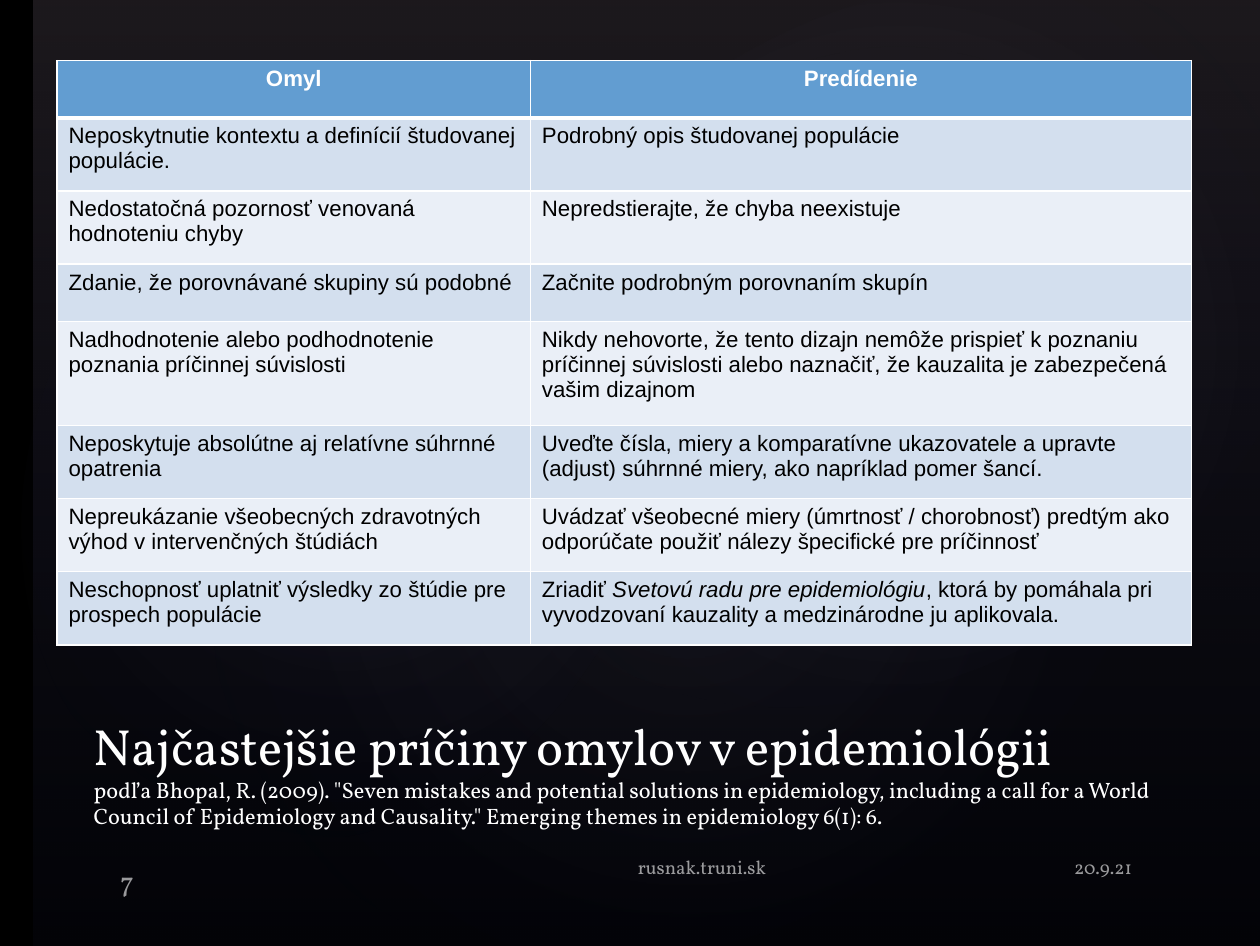
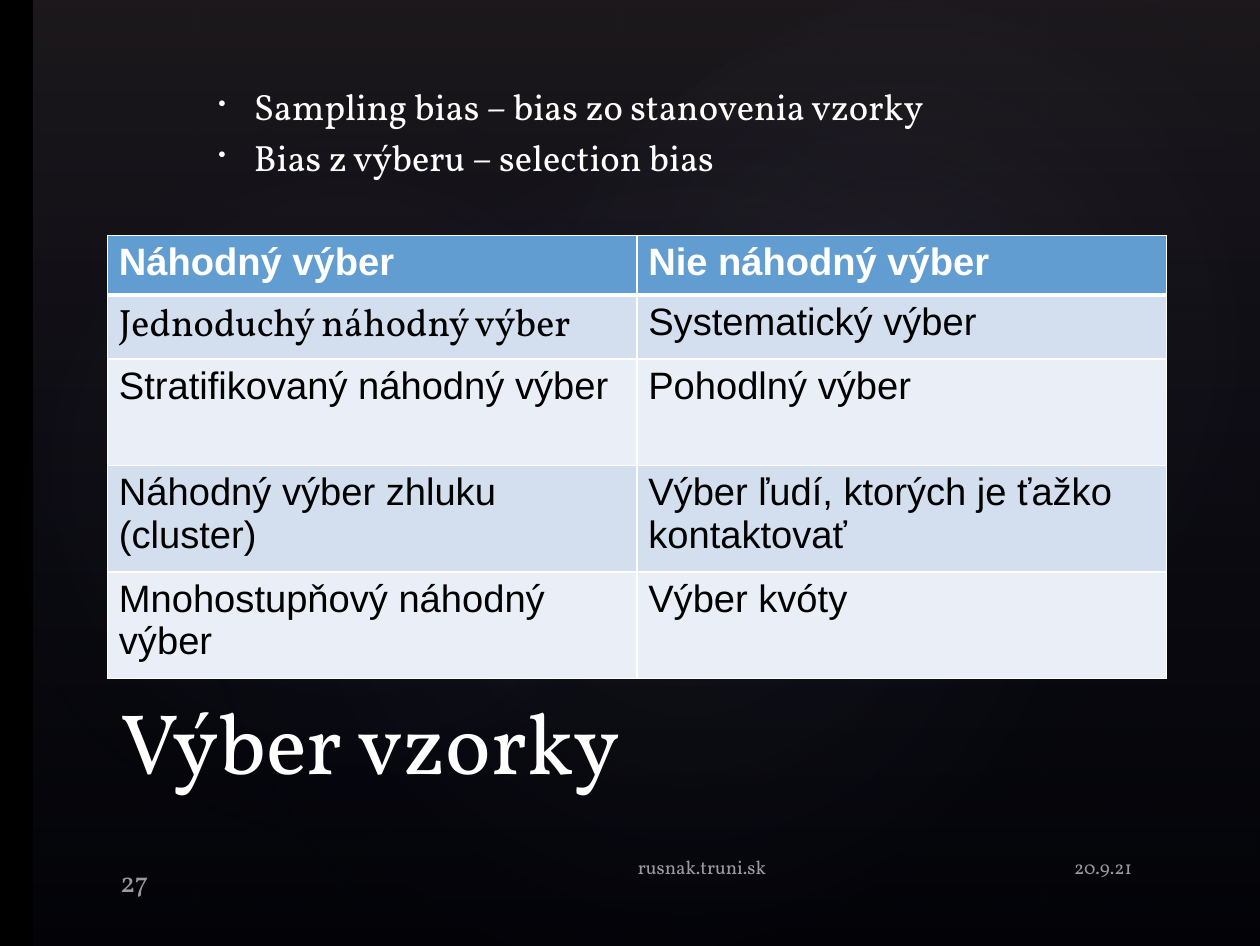
from lxml.etree import SubElement
from pptx import Presentation
from pptx.dml.color import RGBColor
from pptx.enum.shapes import MSO_SHAPE as Shape
from pptx.enum.text import MSO_ANCHOR as Anchor, PP_ALIGN as Align
from pptx.oxml import parse_xml
from pptx.oxml.ns import nsdecls, qn
from pptx.util import Inches, Pt

WIDTH, HEIGHT = 11.02, 8.27
SERIF, SANS = "Vollkorn", "Arial"
WHITE, BLACK = "FFFFFF", "000000"
HEADER_FILL, BAND_FILLS = "629DD1", ("D3DFEE", "EAEFF7")
NIGHT, MAUVE, PEARL = "242852", "504652", "C4BCC6"
LINEAR = '<a:lin ang="5400000" scaled="0"/>'
RADIAL = ('<a:path path="circle">'
          '<a:fillToRect l="50000" t="50000" r="50000" b="50000"/></a:path>')
GLOWS = (
    ((1.65, 1.25, 8.73, 6.88), 328.7, 7),
    ((-0.33, 1.41, 6.68, 5.4), 294.3, 8),
    ((3.95, 0.14, 7.81, 5.73), 328.7, 8),
)
FOOTER = (5.47, 7.42, 1.37, 0.44)
DATE = (9.12, 7.42, 0.89, 0.44)
NUMBER = (0.94, 7.48, 0.9, 0.38)

MISTAKES = (
    ("Omyl", "Predídenie"),
    ("Neposkytnutie kontextu a definícií študovanej populácie.",
     "Podrobný opis študovanej populácie"),
    ("Nedostatočná pozornosť venovaná hodnoteniu chyby",
     "Nepredstierajte, že chyba neexistuje"),
    ("Zdanie, že porovnávané skupiny sú podobné",
     "Začnite podrobným porovnaním skupín"),
    ("Nadhodnotenie alebo podhodnotenie poznania príčinnej súvislosti",
     "Nikdy nehovorte, že tento dizajn nemôže prispieť k poznaniu príčinnej "
     "súvislosti alebo naznačiť, že kauzalita je zabezpečená vašim dizajnom"),
    ("Neposkytuje absolútne aj relatívne súhrnné opatrenia",
     "Uveďte čísla, miery a komparatívne ukazovatele a upravte (adjust) "
     "súhrnné miery, ako napríklad pomer šancí."),
    ("Nepreukázanie všeobecných zdravotných výhod v intervenčných štúdiách",
     "Uvádzať všeobecné miery (úmrtnosť / chorobnosť) predtým ako "
     "odporúčate použiť nálezy špecifické pre príčinnosť"),
    ("Neschopnosť uplatniť výsledky zo štúdie pre prospech populácie",
     ("Zriadiť ", "Svetovú radu pre epidemiológiu",
      ", ktorá by pomáhala pri vyvodzovaní kauzality a medzinárodne ju "
      "aplikovala.")),
)
SAMPLING = (
    ("Náhodný výber", "Nie náhodný výber"),
    ("Jednoduchý náhodný výber", "Systematický výber"),
    ("Stratifikovaný náhodný výber", "Pohodlný výber"),
    ("Náhodný výber zhluku (cluster)",
     "Výber ľudí, ktorých je ťažko kontaktovať"),
    ("Mnohostupňový náhodný výber", "Výber kvóty"),
)
CITATION = ('podľa Bhopal, R. (2009). "Seven mistakes and potential solutions in '
            'epidemiology, including a call for a World Council of Epidemiology '
            'and Causality." Emerging themes in epidemiology 6(1): 6.')


def rgb(value):
    """Turn a hex string into a colour."""
    return RGBColor.from_string(value)


def inches(box):
    """Turn a box of numbers into lengths."""
    return [Inches(length) for length in box]


def write(paragraph, text, size, font=SERIF, color=WHITE, bold=False,
          italic=False, alpha=None):
    """Add a formatted run to a paragraph."""
    run = paragraph.add_run()
    run.text = text
    run.font.size, run.font.name = Pt(size), font
    run.font.bold, run.font.italic = bold, italic
    run.font.color.rgb = rgb(color)
    if alpha is not None:
        color_element = run.font.fill._xPr.find(qn("a:solidFill"))[0]
        SubElement(color_element, qn("a:alpha"), val=str(alpha * 1000))


def add_text_frame(slide, box, anchor=Anchor.TOP, bottom=0.06):
    """Add a wrapping text box and return its frame."""
    frame = slide.shapes.add_textbox(*inches(box)).text_frame
    frame.word_wrap = True
    frame.vertical_anchor = anchor
    frame.margin_left = frame.margin_right = Inches(0.11)
    frame.margin_top, frame.margin_bottom = Inches(0.06), Inches(bottom)
    return frame


def add_gradient_shape(slide, kind, box, stops, direction, rotation=0):
    """Add an unlined shape with a translucent gradient."""
    shape = slide.shapes.add_shape(kind, *inches(box))
    shape.shadow.inherit = False
    shape.line.fill.background()
    shape.rotation = rotation
    stops_xml = "".join(
        f'<a:gs pos="{position * 1000}"><a:srgbClr val="{color}">'
        f'<a:alpha val="{alpha * 1000}"/></a:srgbClr></a:gs>'
        for position, color, alpha in stops)
    gradient = parse_xml(f'<a:gradFill {nsdecls("a")} rotWithShape="1">'
                         f'<a:gsLst>{stops_xml}</a:gsLst>{direction}</a:gradFill>')
    shape._element.spPr.find(qn("a:prstGeom")).addnext(gradient)


def add_backdrop(slide):
    """Add the dark sheet and its soft glows."""
    add_gradient_shape(slide, Shape.RECTANGLE, (0.29, 0, WIDTH - 0.29, HEIGHT),
                       ((0, MAUVE, 36), (100, NIGHT, 10)), LINEAR)
    for box, rotation, alpha in GLOWS:
        add_gradient_shape(slide, Shape.OVAL, box,
                           ((0, PEARL, alpha), (58, NIGHT, 0)), RADIAL, rotation)


def add_footer(slide, number):
    """Add the date, the slide number and the site address."""
    date = add_text_frame(slide, DATE).paragraphs[0]
    date.alignment = Align.RIGHT
    write(date, "20.9.21", 12, alpha=60)
    page = add_text_frame(slide, NUMBER, Anchor.BOTTOM, bottom=0.01)
    write(page.paragraphs[0], str(number), 18, alpha=60)
    write(add_text_frame(slide, FOOTER).paragraphs[0], "rusnak.truni.sk", 12, alpha=60)


def add_title(slide, box, text, size, citation=None):
    """Add the title, with a smaller citation below it if given."""
    paragraph = add_text_frame(slide, box, Anchor.BOTTOM).paragraphs[0]
    write(paragraph, text, size)
    if citation:
        paragraph.add_line_break()
        write(paragraph, citation, 14)


def add_bullets(slide, box, items, size):
    """Add a bulleted list."""
    frame = add_text_frame(slide, box, Anchor.MIDDLE)
    for index, item in enumerate(items):
        paragraph = frame.add_paragraph() if index else frame.paragraphs[0]
        paragraph.space_before = Pt(size * 0.2)
        properties = paragraph._p.get_or_add_pPr()
        properties.set("marL", str(Inches(0.33)))
        properties.set("indent", str(Inches(-0.31)))
        SubElement(properties, qn("a:buSzPct"), val="60000")
        SubElement(properties, qn("a:buChar"), char="•")
        write(paragraph, item, size)


def format_cell(cell, fill, bottom_width):
    """Set white borders and a plain fill."""
    properties = cell._tc.get_or_add_tcPr()
    for side, width in (("L", 1), ("R", 1), ("T", 1), ("B", bottom_width)):
        line = SubElement(properties, qn(f"a:ln{side}"), w=str(Pt(width)))
        SubElement(SubElement(line, qn("a:solidFill")), qn("a:srgbClr"), val=WHITE)
    cell.fill.solid()
    cell.fill.fore_color.rgb = rgb(fill)


def add_banded_table(slide, position, rows, widths, heights, size,
                     header_align=Align.LEFT, serif_cells=()):
    """Add a table with a blue header; odd parts of a split cell are italic."""
    box = (*position, sum(widths), sum(heights))
    table = slide.shapes.add_table(len(rows), len(widths), *inches(box)).table
    for column, width in zip(table.columns, widths):
        column.width = Inches(width)
    for row_index, (values, height) in enumerate(zip(rows, heights)):
        header = row_index == 0
        table.rows[row_index].height = Inches(height)
        fill = HEADER_FILL if header else BAND_FILLS[(row_index - 1) % 2]
        for column_index, value in enumerate(values):
            cell = table.cell(row_index, column_index)
            format_cell(cell, fill, 3 if header else 1)
            paragraph = cell.text_frame.paragraphs[0]
            paragraph.alignment = header_align if header else Align.LEFT
            font = SERIF if (row_index, column_index) in serif_cells else SANS
            parts = (value,) if isinstance(value, str) else value
            for part_index, part in enumerate(parts):
                write(paragraph, part, size, font, WHITE if header else BLACK,
                      bold=header, italic=part_index % 2 == 1)


def add_slide(presentation, number):
    """Add a slide with the shared backdrop and footer."""
    slide = presentation.slides.add_slide(presentation.slide_layouts[6])
    add_backdrop(slide)
    add_footer(slide, number)
    return slide


def add_mistakes_slide(presentation):
    """Build the slide on common mistakes in epidemiology."""
    slide = add_slide(presentation, 7)
    add_title(slide, (0.71, 6.21, 9.52, 1.1),
              "Najčastejšie príčiny omylov v epidemiológii", 32, CITATION)
    add_banded_table(slide, (0.5, 0.53), MISTAKES, (4.14, 5.78),
                     (0.5, 0.64, 0.64, 0.5, 0.91, 0.64, 0.64, 0.64), 14,
                     header_align=Align.CENTER)


def add_sampling_slide(presentation):
    """Build the slide on sample selection."""
    slide = add_slide(presentation, 27)
    add_bullets(slide, (1.78, 0.33, 7.35, 1.64),
                ("Sampling bias – bias zo stanovenia vzorky",
                 "Bias z výberu – selection bias"), 23)
    add_title(slide, (0.94, 5.88, 9.09, 1.1), "Výber vzorky", 54)
    add_banded_table(slide, (0.94, 2.06), SAMPLING, (4.63, 4.63),
                     (0.52, 0.56, 0.93, 0.93, 0.93), 24, serif_cells={(1, 0)})


def main():
    """Build and save the presentation."""
    presentation = Presentation()
    presentation.slide_width = Inches(WIDTH)
    presentation.slide_height = Inches(HEIGHT)
    background = presentation.slide_master.background.fill
    background.solid()
    background.fore_color.rgb = rgb(BLACK)
    add_mistakes_slide(presentation)
    add_sampling_slide(presentation)
    presentation.save("out.pptx")


if __name__ == "__main__":
    main()
